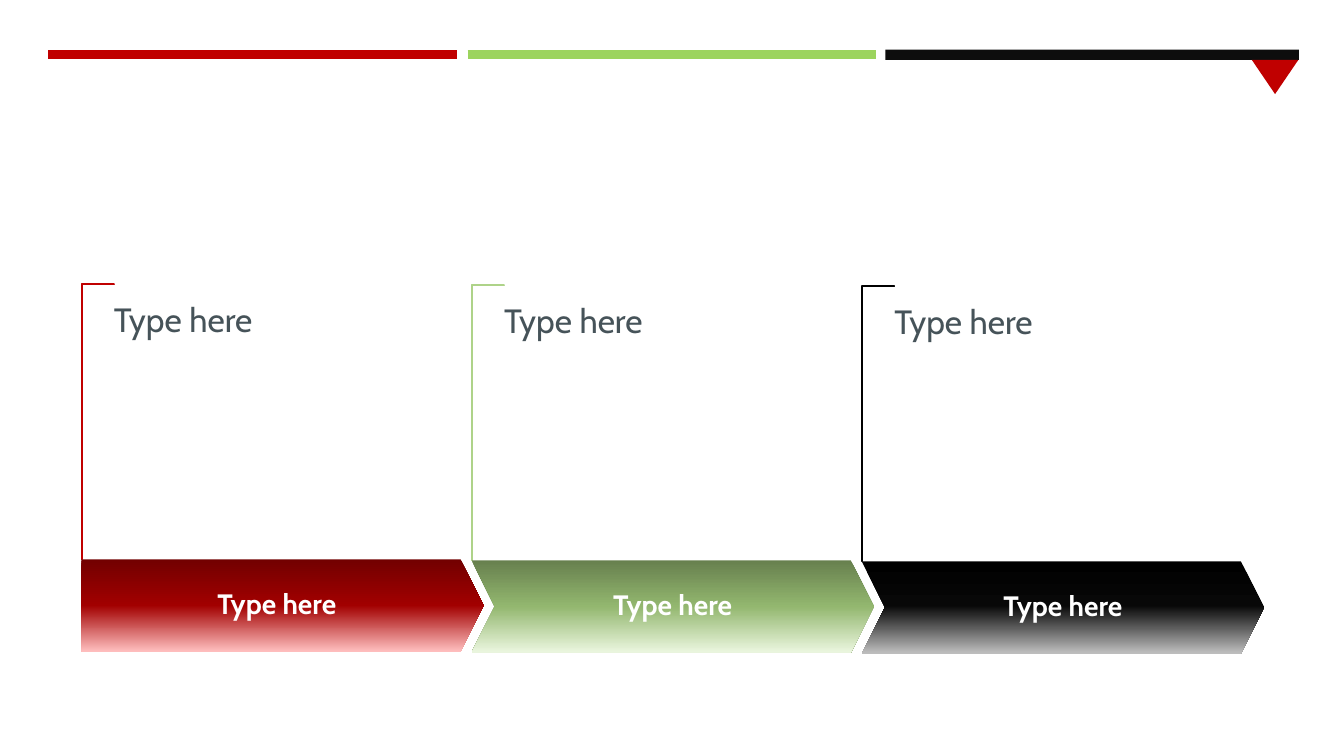
from copy import deepcopy

from pptx import Presentation
from pptx.dml.color import RGBColor
from pptx.enum.shapes import MSO_CONNECTOR, MSO_SHAPE
from pptx.enum.text import MSO_ANCHOR, PP_ALIGN
from pptx.oxml.ns import qn
from pptx.oxml.xmlchemy import OxmlElement
from pptx.util import Pt

FONT = "Cabin"
WHITE = RGBColor(0xFF, 0xFF, 0xFF)
BLACK = RGBColor(0x00, 0x00, 0x00)
NEAR_BLACK = RGBColor(0x0D, 0x0D, 0x0D)
SLATE = RGBColor(0x46, 0x53, 0x59)
RED = RGBColor(0xC0, 0x00, 0x00)
BRIGHT_GREEN = RGBColor(0x9C, 0xD4, 0x5E)
SOFT_GREEN = RGBColor(0xAE, 0xD3, 0x89)
RED_GRADIENT = (
    (0, RGBColor(0x72, 0x00, 0x00)),
    (0.5, RGBColor(0xA2, 0x00, 0x00)),
    (1, RGBColor(0xFF, 0xBF, 0xBF)),
)
GREEN_GRADIENT = (
    (0, RGBColor(0x67, 0x80, 0x4E)),
    (0.5, RGBColor(0x93, 0xB7, 0x6F)),
    (1, RGBColor(0xEB, 0xF6, 0xDF)),
)
BLACK_GRADIENT = (
    (0, BLACK),
    (0.48, RGBColor(0x08, 0x08, 0x08)),
    (1, RGBColor(0xBF, 0xBF, 0xBF)),
)

STEPS = (
    (MSO_SHAPE.PENTAGON, RED_GRADIENT, SLATE, RED),
    (MSO_SHAPE.CHEVRON, GREEN_GRADIENT, SOFT_GREEN, SOFT_GREEN),
    (MSO_SHAPE.CHEVRON, BLACK_GRADIENT, BLACK, BLACK),
)
FIRST_LEFT, STEP_PITCH = 58.2, 278.7
ARROW_TOP, STEP_DROP = 399.6, 0.72
ARROW_WIDTH, ARROW_HEIGHT = 287.3, 65.8
BRACKET_LENGTH, BRACKET_DEPTH = 196.6, 23.2
TEXT_RISE = 183


def add_bar_line(slide, left, right, color):
    line = slide.shapes.add_connector(
        MSO_CONNECTOR.STRAIGHT, Pt(left), Pt(39), Pt(right), Pt(39)
    )
    line.line.color.rgb = color
    line.line.width = Pt(6.5)
    line._element.spPr.append(OxmlElement("a:effectLst"))


def add_plain_shape(slide, kind, left, top, width, height):
    shape = slide.shapes.add_shape(kind, Pt(left), Pt(top), Pt(width), Pt(height))
    shape.shadow.inherit = False
    shape.line.fill.background()
    return shape


def fill_solid(shape, color):
    shape.fill.solid()
    shape.fill.fore_color.rgb = color


def fill_gradient(shape, stops):
    shape.fill.gradient()
    shape.fill.gradient_angle = 270
    stop_list = shape._element.spPr.find(qn("a:gradFill")).find(qn("a:gsLst"))
    stop_list.append(deepcopy(stop_list[0]))
    for stop, (position, color) in zip(shape.fill.gradient_stops, stops):
        stop.position = position
        stop.color.rgb = color


def make_corner(shape):
    geometry = shape._element.spPr.find(qn("a:prstGeom"))
    geometry.set("prst", "corner")
    adjustments = geometry.find(qn("a:avLst"))
    for name in ("adj1", "adj2"):
        guide = OxmlElement("a:gd")
        guide.set("name", name)
        guide.set("fmla", "val 1000")
        adjustments.append(guide)


def write_text(shape, text, size, color, bold, alignment, anchor, side, vertical):
    frame = shape.text_frame
    frame.word_wrap = True
    frame.vertical_anchor = anchor
    frame.margin_left = frame.margin_right = Pt(side)
    frame.margin_top = frame.margin_bottom = Pt(vertical)
    paragraph = frame.paragraphs[0]
    paragraph.alignment = alignment
    paragraph.line_spacing = 0.9
    run = paragraph.add_run()
    run.text = text
    run.font.name = FONT
    run.font.size = Pt(size)
    run.font.bold = bold
    run.font.color.rgb = color


def add_bracket(slide, left, bottom, fill_color, line_color):
    center_x = left + BRACKET_DEPTH / 2
    center_y = bottom - BRACKET_LENGTH / 2
    bracket = add_plain_shape(
        slide,
        MSO_SHAPE.RECTANGLE,
        center_x - BRACKET_LENGTH / 2,
        center_y - BRACKET_DEPTH / 2,
        BRACKET_LENGTH,
        BRACKET_DEPTH,
    )
    make_corner(bracket)
    bracket.rotation = 90
    fill_solid(bracket, fill_color)
    bracket.line.color.rgb = line_color
    bracket.line.width = Pt(1)


def add_arrow(slide, kind, left, top, stops):
    arrow = add_plain_shape(slide, kind, left, top, ARROW_WIDTH, ARROW_HEIGHT)
    arrow.adjustments[0] = 0.25
    fill_gradient(arrow, stops)
    write_text(arrow, "Type here", 20, WHITE, True,
               PP_ALIGN.CENTER, MSO_ANCHOR.MIDDLE, 10, 20)


def add_description(slide, left, top):
    box = slide.shapes.add_textbox(Pt(left), Pt(top), Pt(233.3), Pt(142.6))
    write_text(box, "Type here", 24, SLATE, False,
               PP_ALIGN.LEFT, MSO_ANCHOR.TOP, 0, 0)


def add_marker(slide):
    builder = slide.shapes.build_freeform(Pt(894.2), Pt(42.8))
    builder.add_line_segments([(Pt(910.8), Pt(67.2)), (Pt(927.4), Pt(42.8))])
    marker = builder.convert_to_shape()
    marker.shadow.inherit = False
    marker.line.fill.background()
    fill_solid(marker, RED)


def main():
    presentation = Presentation()
    presentation.slide_width = Pt(960)
    presentation.slide_height = Pt(540)
    slide = presentation.slides.add_slide(presentation.slide_layouts[6])

    add_bar_line(slide, 34.4, 326.2, RED)
    add_bar_line(slide, 334.1, 625.8, BRIGHT_GREEN)
    black_bar = add_plain_shape(slide, MSO_SHAPE.RECTANGLE, 632.4, 35.4, 295.4, 7.4)
    fill_solid(black_bar, NEAR_BLACK)
    add_marker(slide)

    for index, (kind, stops, bracket_fill, bracket_line) in enumerate(STEPS):
        left = FIRST_LEFT + index * STEP_PITCH
        top = ARROW_TOP + index * STEP_DROP
        add_bracket(slide, left, top, bracket_fill, bracket_line)
        add_arrow(slide, kind, left, top, stops)
        add_description(slide, left + BRACKET_DEPTH, top - TEXT_RISE)

    presentation.save("out.pptx")


if __name__ == "__main__":
    main()
